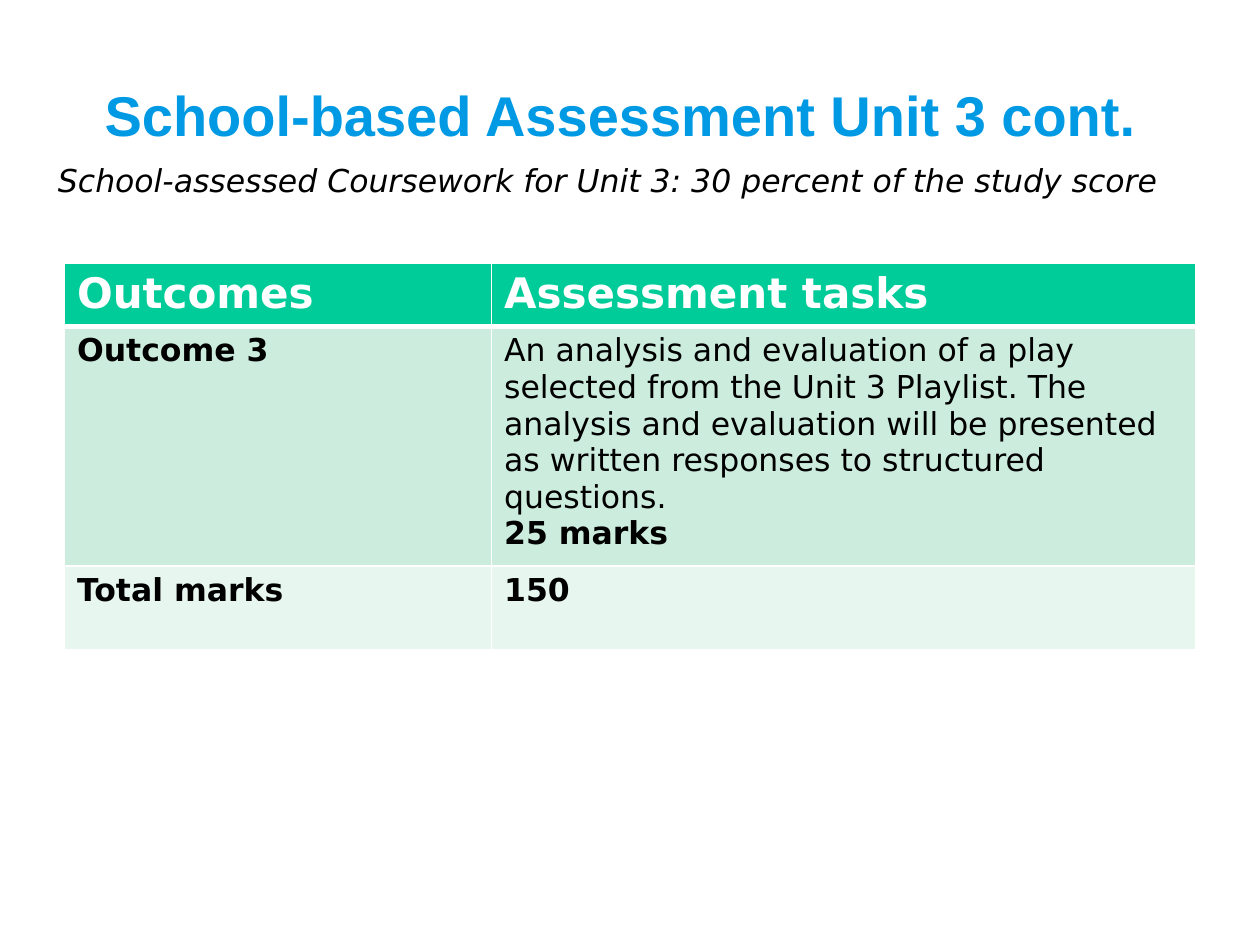
import pptx
import pptx.util
import pptx.dml.color
import pptx.enum.text
import pptx.oxml
import pptx.oxml.ns

Cm = pptx.util.Cm
Pt = pptx.util.Pt
RGBColor = pptx.dml.color.RGBColor
ANCHOR = pptx.enum.text.MSO_ANCHOR
ALIGN = pptx.enum.text.PP_ALIGN

BLUE = RGBColor(0x00, 0x99, 0xE3)
BLACK = RGBColor(0x00, 0x00, 0x00)
WHITE = RGBColor(0xFF, 0xFF, 0xFF)
GREEN = RGBColor(0x00, 0xCC, 0x99)
MINT = RGBColor(0xCC, 0xEC, 0xDE)
PALE_MINT = RGBColor(0xE7, 0xF6, 0xEF)

TITLE_FORMAT = {"name": "Arial", "size": Pt(32), "bold": True, "color": BLUE}
SUBTITLE_FORMAT = {"name": "DejaVu Sans", "size": Pt(18), "italic": True, "color": BLACK}
HEADER_FORMAT = {"name": "DejaVu Sans", "size": Pt(24), "bold": True, "color": WHITE}
STRONG_FORMAT = {"name": "DejaVu Sans", "size": Pt(18), "bold": True, "color": BLACK}
BODY_FORMAT = {**STRONG_FORMAT, "bold": False}

COLUMN_WIDTHS = (8.61, 14.2)
ROW_HEIGHTS = (1.23, 4.67, 1.69)
ROW_FILLS = (GREEN, MINT, PALE_MINT)
TASK = (
    "An analysis and evaluation of a play selected from the Unit 3 Playlist. "
    "The analysis and evaluation will be presented as written responses to "
    "structured questions."
)
ROWS = (
    ([("Outcomes", HEADER_FORMAT)], [("Assessment tasks", HEADER_FORMAT)]),
    ([("Outcome 3", STRONG_FORMAT)], [(TASK, BODY_FORMAT), ("25 marks", STRONG_FORMAT)]),
    ([("Total marks", STRONG_FORMAT)], [("150", STRONG_FORMAT)]),
)


def write_span(para, text, values):
    """Add text to a paragraph and apply the format values."""
    span = para.add_run()
    span.text = text
    for name, value in values.items():
        if name == "color":
            span.font.color.rgb = value
        else:
            setattr(span.font, name, value)


def add_line_of_text(page, box, text, values, frame_values, align):
    """Place a single line of text in the given box."""
    frame = page.shapes.add_textbox(*map(Cm, box)).text_frame
    for name, value in {"word_wrap": True, **frame_values}.items():
        setattr(frame, name, value)
    para = frame.paragraphs[0]
    para.alignment = align
    write_span(para, text, values)


def set_borders(cell, widths):
    """Draw white borders of the given widths in points around a cell."""
    properties = cell._tc.get_or_add_tcPr()
    namespace = pptx.oxml.ns.nsdecls("a")
    for side, width in widths.items():
        properties.append(pptx.oxml.parse_xml(
            f'<a:ln{side} {namespace} w="{Pt(width)}"><a:solidFill>'
            f'<a:srgbClr val="{WHITE}"/></a:solidFill></a:ln{side}>'
        ))


def fill_cell(cell, paragraphs, color, widths):
    """Give a cell its borders, fill and paragraphs."""
    set_borders(cell, widths)
    cell.fill.solid()
    cell.fill.fore_color.rgb = color
    frame = cell.text_frame
    for index, (text, values) in enumerate(paragraphs):
        para = frame.add_paragraph() if index else frame.paragraphs[0]
        write_span(para, text, values)


def add_outcome_table(page, left, top):
    """Place the table of outcomes with its corner at left and top."""
    box = (left, top, sum(COLUMN_WIDTHS), sum(ROW_HEIGHTS))
    table = page.shapes.add_table(len(ROWS), len(COLUMN_WIDTHS), *map(Cm, box)).table
    for column, width in zip(table.columns, COLUMN_WIDTHS):
        column.width = Cm(width)
    for index, (row, height) in enumerate(zip(table.rows, ROW_HEIGHTS)):
        row.height = Cm(height)
        widths = {"L": 1, "R": 1, "T": 3 if index == 1 else 1, "B": 3 if index == 0 else 1}
        for cell, paragraphs in zip(row.cells, ROWS[index]):
            fill_cell(cell, paragraphs, ROW_FILLS[index], widths)


def main():
    """Build the assessment slide and save it."""
    deck = pptx.Presentation()
    deck.slide_width, deck.slide_height = Cm(25.4), Cm(19.05)
    page = deck.slides.add_slide(deck.slide_layouts[6])
    add_line_of_text(
        page, (1.3, 0.91, 22.43, 2.79), "School-based Assessment Unit 3 cont.",
        TITLE_FORMAT, {"vertical_anchor": ANCHOR.MIDDLE}, ALIGN.CENTER,
    )
    add_outcome_table(page, 1.3, 5.31)
    add_line_of_text(
        page, (0.51, 3.12, 23.39, 1.02),
        "School-assessed Coursework for Unit 3: 30 percent of the study score",
        SUBTITLE_FORMAT, {"margin_left": Cm(0.66)}, ALIGN.LEFT,
    )
    deck.save("out.pptx")


if __name__ == "__main__":
    main()
